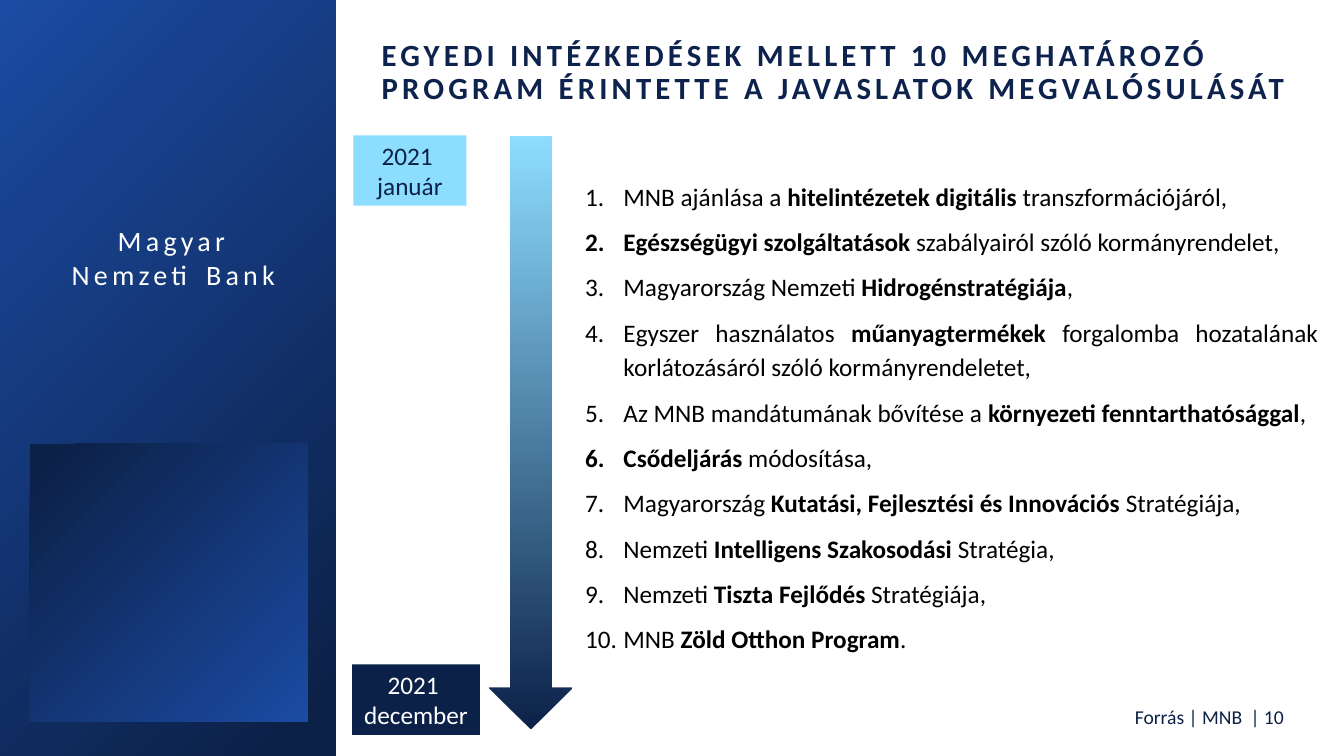
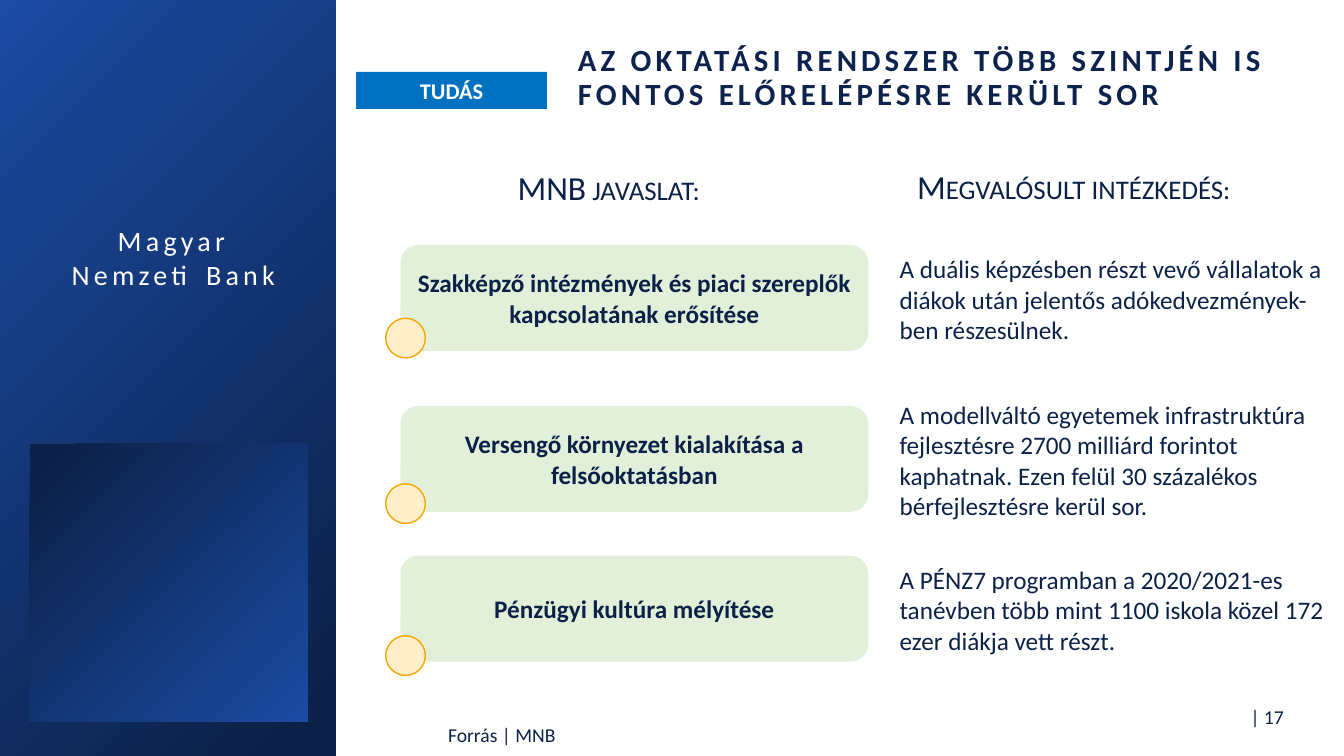
from lxml import etree
from pptx import Presentation
from pptx.dml.color import RGBColor
from pptx.enum.shapes import MSO_SHAPE
from pptx.enum.text import MSO_ANCHOR, MSO_AUTO_SIZE, PP_ALIGN
from pptx.oxml.ns import qn
from pptx.util import Inches, Pt

RECT, ROUND, OVAL, ARROW = (MSO_SHAPE.RECTANGLE, MSO_SHAPE.ROUNDED_RECTANGLE,
                            MSO_SHAPE.OVAL, MSO_SHAPE.DOWN_ARROW)
LEFT, CENTER, RIGHT, JUSTIFY = PP_ALIGN.LEFT, PP_ALIGN.CENTER, PP_ALIGN.RIGHT, PP_ALIGN.JUSTIFY
TOP, MIDDLE = MSO_ANCHOR.TOP, MSO_ANCHOR.MIDDLE

NAVY, TITLE, BLUE, SKY = "0C2148", "0D234D", "1B4BA3", "8DDDFF"
TAG, GREEN, CREAM, AMBER = "0070C0", "E2F0D9", "FFEECA", "F6A800"
WHITE, BLACK = "FFFFFF", "000000"
PANEL = {"stops": [(0.06, NAVY), (1, BLUE)], "angle": 135}
FADE = {"stops": [(0, NAVY), (1, SKY)], "angle": 90}

rgb = RGBColor.from_string
prs = Presentation()
prs.slide_width, prs.slide_height = Inches(13.33), Inches(7.5)
W, H = prs.slide_width, prs.slide_height


def box(s, kind, at, fill=None, line=None):
    x, y, w, h = at
    place = [int(v * side / 100) for v, side in ((x, W), (y, H), (w, W), (h, H))]
    if kind is None:
        return s.shapes.add_textbox(*place)
    sp = s.shapes.add_shape(kind, *place)
    sp.shadow.inherit = False
    if isinstance(fill, dict):
        sp.fill.gradient()
        sp.fill.gradient_angle = fill["angle"]
        for stop, (position, color) in zip(sp.fill.gradient_stops, fill["stops"]):
            stop.position = position
            stop.color.rgb = rgb(color)
    else:
        sp.fill.solid()
        sp.fill.fore_color.rgb = rgb(fill)
    if line:
        sp.line.color.rgb = rgb(line)
        sp.line.width = Pt(1)
    else:
        sp.line.fill.background()
    return sp


def write(sp, lines, size=18, color=NAVY, bold=False, para=None, anchor=MIDDLE, extra=None):
    tf = sp.text_frame
    tf.word_wrap = True
    tf.auto_size = MSO_AUTO_SIZE.NONE
    tf.vertical_anchor = anchor
    for i, line in enumerate(lines):
        p = tf.add_paragraph() if i else tf.paragraphs[0]
        for name, value in (para or {"alignment": LEFT}).items():
            setattr(p, name, value)
        for j, part in enumerate(line.split("*")):
            if not part:
                continue
            r = p.add_run()
            r.text = part
            font = {"name": "Calibri", "size": Pt(size), "bold": bold or j % 2 == 1}
            for name, value in font.items():
                setattr(r.font, name, value)
            r.font.color.rgb = rgb(color)
            for name, value in (extra or {}).items():
                r._r.get_or_add_rPr().set(name, value)
    return tf


CENTERED = {"alignment": CENTER}
TIGHT = {"alignment": LEFT, "line_spacing": 0.9}
SPACED = {"spc": "300"}

pages = [
    ("EGYEDI INTÉZKEDÉSEK MELLETT 10 MEGHATÁROZÓ PROGRAM ÉRINTETTE A JAVASLATOK MEGVALÓSULÁSÁT",
     (27.8, 4.5, 68.9, 10.4), "| 10 ", (83.7, 92.3, 10.5, 5.3)),
    ("AZ OKTATÁSI RENDSZER TÖBB SZINTJÉN IS FONTOS ELŐRELÉPÉSRE KERÜLT SOR",
     (42.4, 5.2, 54.5, 10.4), "| 17 ", (32.6, 95.5, 29.6, 3.7)),
]
slides = []
for title, (x, y, w, h), number, source_at in pages:
    s = prs.slides.add_slide(prs.slide_layouts[5])
    slides.append(s)
    box(s, RECT, (0, 0, 25, 100), PANEL)
    box(s, RECT, (2.2, 58.7, 20.7, 36.8), PANEL).rotation = 180
    write(box(s, None, (3.4, 28.9, 19, 10.3)), ["Magyar Nemzeti Bank"], 20, WHITE,
          para=CENTERED, anchor=TOP, extra=SPACED)
    write(box(s, None, (91.4, 92, 5.2, 5.5)), [number], 14, para={"alignment": RIGHT})
    write(box(s, None, source_at), ["Forrás | MNB"], 14, para=TIGHT)
    head = s.shapes.title
    place = {"left": x * W, "top": y * H, "width": w * W, "height": h * H}
    for name, value in place.items():
        setattr(head, name, int(value / 100))
    tf = write(head, [title], 22, TITLE, True, TIGHT, extra=SPACED)
    tf.margin_left = tf.margin_right = Inches(0.08)
    tf.margin_top = tf.margin_bottom = Inches(0.04)

programs, education = slides

s = programs
measures = [
    "MNB ajánlása a *hitelintézetek digitális *transzformációjáról,",
    "*Egészségügyi szolgáltatások *szabályairól szóló kormányrendelet,",
    "Magyarország Nemzeti *Hidrogénstratégiája*,",
    "Egyszer használatos *műanyagtermékek* forgalomba hozatalának korlátozásáról szóló kormányrendeletet,",
    "Az MNB mandátumának bővítése a *környezeti fenntarthatósággal*,",
    "*Csődeljárás* módosítása,",
    "Magyarország *Kutatási, Fejlesztési és Innovációs *Stratégiája,",
    "Nemzeti *Intelligens Szakosodási *Stratégia,",
    "Nemzeti *Tiszta Fejlődés *Stratégiája,",
    "MNB *Zöld Otthon Program*.",
]
tf = write(box(s, None, (42.8, 22.7, 56, 65.6)), measures, color=BLACK, anchor=TOP,
           para={"alignment": JUSTIFY, "line_spacing": 1.15, "space_after": Pt(7.5)})
for p in tf.paragraphs:
    pPr = p._p.get_or_add_pPr()
    pPr.set("marL", str(Inches(0.38)))
    pPr.set("indent", str(-Inches(0.38)))
    etree.SubElement(pPr, qn("a:buAutoNum")).set("type", "arabicPeriod")

box(s, ARROW, (36.4, 18, 6.2, 78.5), FADE)
for month, at, fill, color in [("január", (26.3, 17.9, 8.4, 9.3), SKY, NAVY),
                               ("december", (26.2, 87.9, 9.5, 9.3), NAVY, WHITE)]:
    write(box(s, RECT, at, fill), ["2021 ", month], color=color, para=CENTERED)

s = education
write(box(s, RECT, (26.5, 9.5, 14.2, 4.9), TAG), ["TUDÁS"], 16, WHITE, True, CENTERED)
for heading, at in [("MNB javaslat:", (35, 21.5, 20.6, 6.5)),
                    ("Megvalósult intézkedés:", (66.3, 21.3, 27.2, 6.5))]:
    write(box(s, None, at), [heading], 24, para=CENTERED, extra={"cap": "small"})

rows = [
    (32.4, 42.1, "Szakképző intézmények és piaci szereplők kapcsolatának erősítése",
     "A duális képzésben részt vevő vállalatok a diákok után jelentős adókedvezmények-ben részesülnek."),
    (53.7, 64, "Versengő környezet kialakítása a felsőoktatásban",
     "A modellváltó egyetemek infrastruktúra fejlesztésre 2700 milliárd forintot kaphatnak. "
     "Ezen felül 30 százalékos bérfejlesztésre kerül sor."),
    (73.5, 84.1, "Pénzügyi kultúra mélyítése",
     "A PÉNZ7 programban a 2020/2021-es tanévben több mint 1100 iskola közel 172 ezer diákja vett részt."),
]
for top, dot_top, proposal, result in rows:
    write(box(s, ROUND, (29.8, top, 34.8, 14), GREEN), [proposal], bold=True, para=CENTERED)
    write(box(s, None, (66.2, top - 1.6, 33.1, 17.5)), [result])
    box(s, OVAL, (28.7, dot_top, 2.95, 5.25), CREAM, AMBER)

prs.save("out.pptx")
